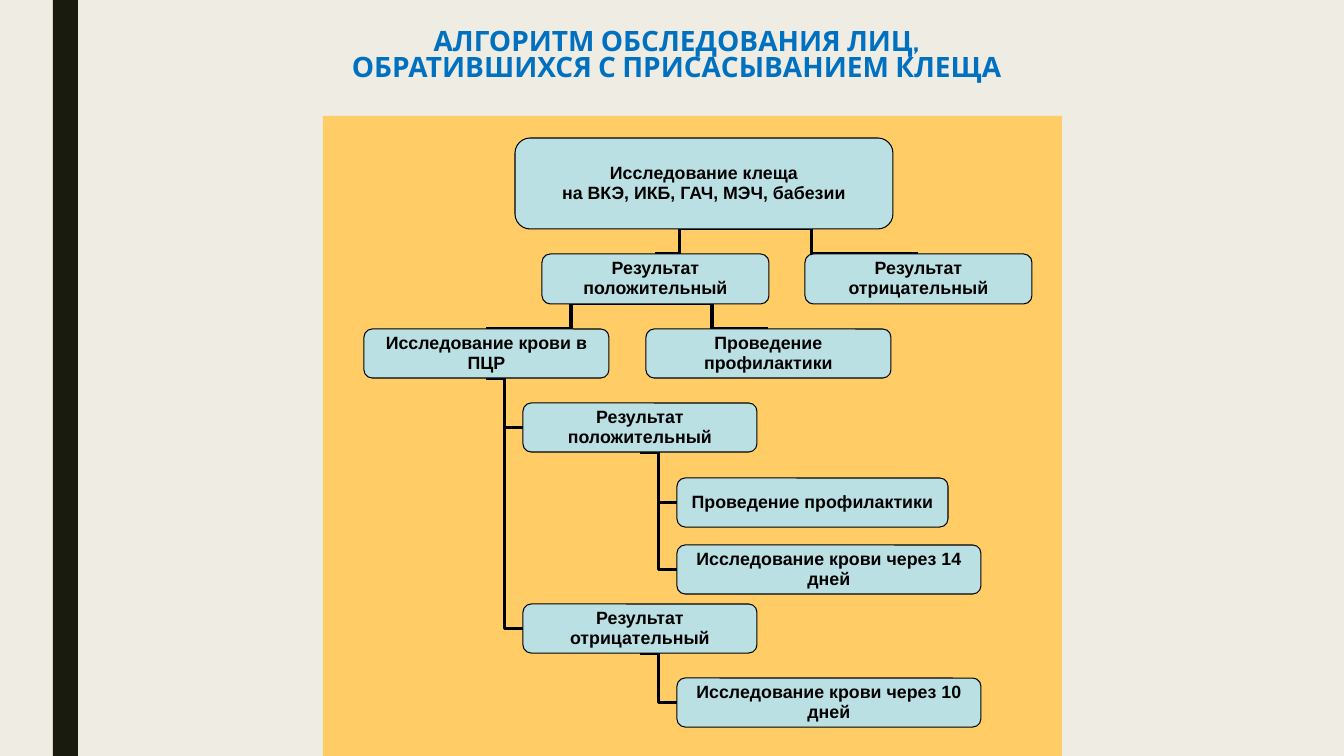
"""Build a slide with the examination flowchart for people bitten by a tick."""
from lxml import etree
from pptx import Presentation
from pptx.dml.color import RGBColor
from pptx.enum.shapes import MSO_CONNECTOR, MSO_SHAPE
from pptx.enum.text import MSO_ANCHOR, PP_ALIGN
from pptx.oxml.ns import qn
from pptx.util import Pt

RECT, ROUNDED = MSO_SHAPE.RECTANGLE, MSO_SHAPE.ROUNDED_RECTANGLE
ELBOW = MSO_CONNECTOR.ELBOW
CENTER = PP_ALIGN.CENTER
TOP, MIDDLE = MSO_ANCHOR.TOP, MSO_ANCHOR.MIDDLE

COLORS = {"bg": "EFEDE3", "stripe": "191B0E", "title": "0070C0",
          "panel": "FFCC66", "box": "BBE0E3", "ink": "000000"}
SLIDE = (1344, 756)
STRIPE = (53, 0, 25, 756)
PANEL = (323, 116, 739, 640)
TITLE_BOX = (139, 25, 1119, 78)
TITLE = ["АЛГОРИТМ ОБСЛЕДОВАНИЯ ЛИЦ,", "ОБРАТИВШИХСЯ С ПРИСАСЫВАНИЕМ КЛЕЩА"]
TITLE_SHIFT = 44

BOXES = {
    "tick": ((515, 138, 378, 91), ["Исследование клеща", "на ВКЭ, ИКБ, ГАЧ, МЭЧ, бабезии"]),
    "tick_pos": ((542, 254, 227, 50), ["Результат положительный"]),
    "tick_neg": ((805, 254, 227, 50), ["Результат отрицательный"]),
    "blood": ((364, 329, 245, 49), ["Исследование крови в ПЦР"]),
    "prevent": ((646, 329, 245, 49), ["Проведение профилактики"]),
    "blood_pos": ((523, 403, 234, 49), ["Результат положительный"]),
    "blood_neg": ((523, 604, 234, 49), ["Результат отрицательный"]),
    "treat": ((677, 478, 271, 49), ["Проведение профилактики"]),
    "retest_14": ((677, 545, 304, 49), ["Исследование крови через 14 дней"]),
    "retest_10": ((677, 678, 304, 49), ["Исследование крови через 10 дней"]),
}
BRANCHES_TO_TOP = [("tick", "tick_pos"), ("tick", "tick_neg"),
                   ("tick_pos", "blood"), ("tick_pos", "prevent")]
BRANCHES_TO_SIDE = [("blood", "blood_pos"), ("blood", "blood_neg"),
                    ("blood_pos", "treat"), ("blood_pos", "retest_14"),
                    ("blood_neg", "retest_10")]


def px(n):
    return round(n * 914400 / 100.8)


def rgb(name):
    return RGBColor.from_string(COLORS[name])


def add_block(s, kind, rect, fill, line=None):
    sp = s.shapes.add_shape(kind, *map(px, rect))
    sp.shadow.inherit = False
    sp.fill.solid()
    sp.fill.fore_color.rgb = rgb(fill)
    if line:
        sp.line.color.rgb = rgb(line)
        sp.line.width = Pt(0.75)
    else:
        sp.line.fill.background()
    return sp


def write(sp, lines, font, size, color, spacing, anchor, inset):
    tf = sp.text_frame
    tf.word_wrap = True
    tf.vertical_anchor = anchor
    tf.margin_left = tf.margin_right = px(inset)
    tf.margin_top = tf.margin_bottom = px(inset / 2)
    tf.text = "\n".join(lines)
    for p in tf.paragraphs:
        p.alignment = CENTER
        p.line_spacing = spacing
        p.font.name = font
        p.font.size = Pt(size)
        p.font.bold = True
        p.font.color.rgb = rgb(color)
    return tf


def add_branch(s, start, end):
    c = s.shapes.add_connector(ELBOW, *map(px, start + end))
    c.line.color.rgb = rgb("ink")
    c.line.width = Pt(2.25)
    etree.SubElement(c._element.spPr, qn("a:effectLst"))


def top(name):
    x, y, w, h = BOXES[name][0]
    return x + w / 2, y


def side(name):
    x, y, w, h = BOXES[name][0]
    return x, y + h / 2


def bottom(name):
    x, y, w, h = BOXES[name][0]
    return x + w / 2, y + h


def main():
    prs = Presentation()
    prs.slide_width, prs.slide_height = map(px, SLIDE)
    s = prs.slides.add_slide(prs.slide_layouts[6])
    s.background.fill.solid()
    s.background.fill.fore_color.rgb = rgb("bg")

    add_block(s, RECT, STRIPE, "stripe")
    title = s.shapes.add_textbox(*map(px, TITLE_BOX))
    tf = write(title, TITLE, "Cabin", 20, "title", 0.79, TOP, 10)
    tf.paragraphs[0]._p.get_or_add_pPr().set("marR", str(px(TITLE_SHIFT)))

    add_block(s, RECT, PANEL, "panel")
    for parent, child in BRANCHES_TO_TOP:
        add_branch(s, top(child), bottom(parent))
    for parent, child in BRANCHES_TO_SIDE:
        add_branch(s, side(child), bottom(parent))
    for rect, lines in BOXES.values():
        sp = add_block(s, ROUNDED, rect, "box", "ink")
        write(sp, lines, "Arial", 12.7, "ink", 0.93, MIDDLE, 6)

    prs.save("out.pptx")


if __name__ == "__main__":
    main()
